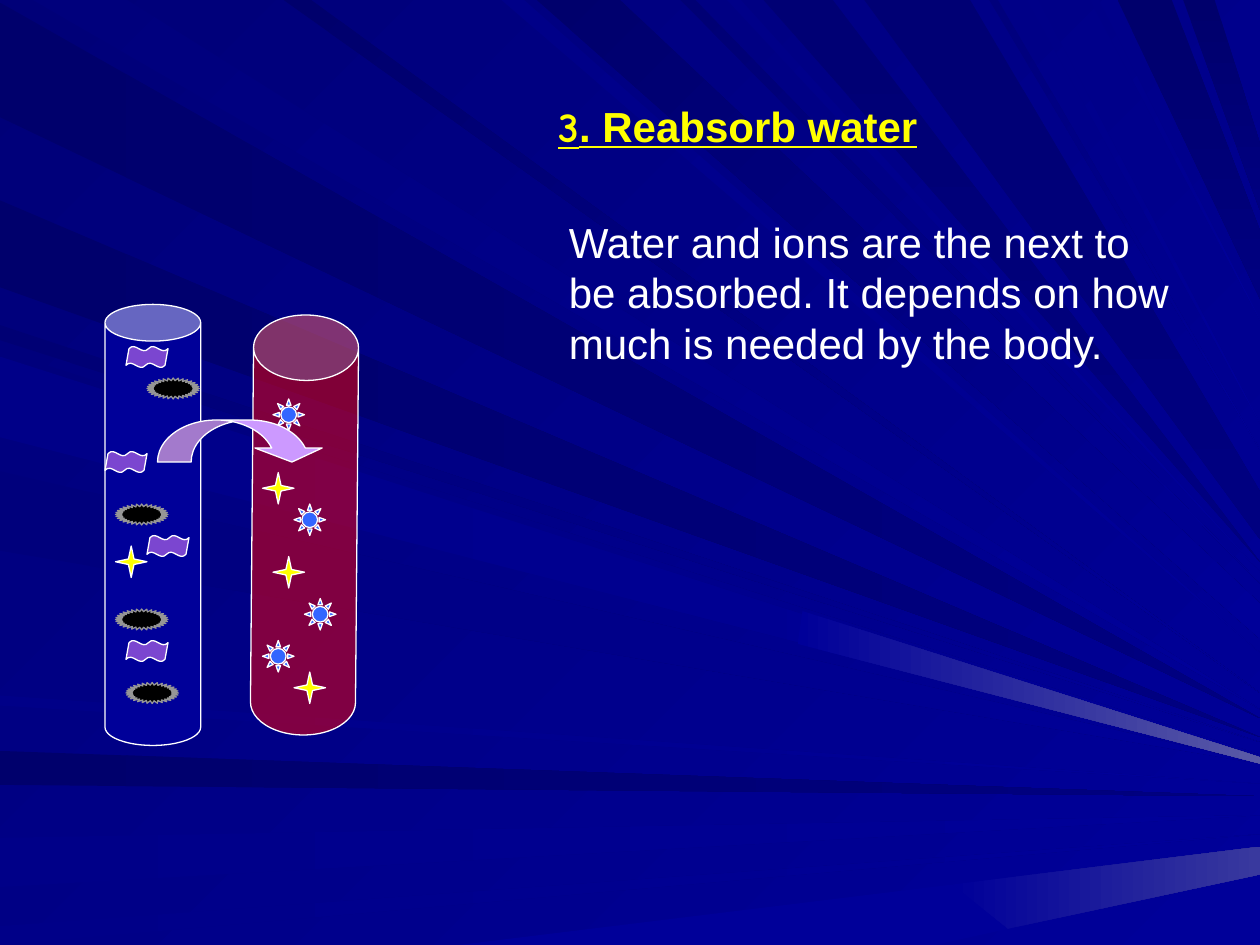
from functools import partial

from lxml.etree import SubElement
from pptx import Presentation
from pptx.dml.color import RGBColor
from pptx.enum.shapes import MSO_SHAPE
from pptx.oxml.ns import qn
from pptx.util import Cm, Pt

navy = partial(RGBColor, 0, 0)  # pure blue of a given depth

DEEP = navy(0x6C)
DARK = navy(0x74)
MID = navy(0x7C)
NAVY = navy(0x80)
SOFT = navy(0x88)
BLUE = navy(0x99)
GLOW_LOW = RGBColor(0x39, 0x39, 0x9E)
GLOW_HIGH = RGBColor(0x5A, 0x5A, 0xA6)
WHITE = RGBColor(0xFF, 0xFF, 0xFF)
YELLOW = RGBColor(0xFF, 0xFF, 0x00)
RED = RGBColor(0xFF, 0x00, 0x00)
BLACK = RGBColor(0x00, 0x00, 0x00)
GREY = RGBColor(0x96, 0x96, 0x96)
PURPLE = RGBColor(0x7B, 0x46, 0xD0)
LILAC = RGBColor(0xCC, 0x99, 0xFF)
SKY = RGBColor(0x33, 0x66, 0xFF)

# Rays run to the right edge; lengths in 1/1000 of the slide width.
# First colour, last colour, start and end on the near edge, height(s) of the tip
LEFT_RAYS = [
    (DEEP, NAVY, 2, 93, 570),
    (DEEP, NAVY, 596, 623, 632),
    (SOFT, BLUE, 665, 704, 647),
    (SOFT, BLUE, 735, 750, 662),
    (DARK, BLUE, 258, 270, 589),
    (DEEP, NAVY, 159, 228, 585),
    (MID, BLUE, 278, 342, 599),
    (MID, BLUE, 374, 437, 606),
    (SOFT, BLUE, 552, 560, 622),
    (SOFT, BLUE, 283, 347, 604),
]
TOP_RAYS = [
    (MID, BLUE, 26, 101, 563),
    (SOFT, BLUE, 398, 416, 518),
    (DEEP, BLUE, 426, 492, 507, 479),
    (DARK, BLUE, 540, 552, 463),
    (DARK, NAVY, 606, 661, 446),
    (DEEP, NAVY, 887, 930, 237, 183),
    (DEEP, NAVY, 939, 964, 167, 114),
    (DEEP, BLUE, 225, 247, 550),
    (SOFT, BLUE, 577, 588, 454),
    (DARK, NAVY, 686, 770, 428, 390),
    (MID, BLUE, 785, 792, 357),
    (SOFT, BLUE, 815, 824, 336),
    (SOFT, BLUE, 865, 872, 254),
]
GLOWS = [
    (BLUE, BLUE, [(364, 750), (742, 750), (801, 737), (756, 702)]),
    (BLUE, GLOW_LOW, [(756, 702), (800, 737), (1000, 694), (1000, 672)]),
    (BLUE, GLOW_HIGH, [(637, 485), (633, 511), (1000, 606), (1000, 601)]),
]

# Particles: preset, adjustments, fill, line, size, places (in grid steps)
PARTICLES = [
    (MSO_SHAPE.STAR_4_POINT, [0.125], YELLOW, WHITE, (3, 3),
     [(11, 52), (25, 45), (26, 53), (28, 64)]),
    (MSO_SHAPE.DOUBLE_WAVE, [0.103, -0.036], PURPLE, WHITE, (4, 2),
     [(12, 61), (10, 43), (14, 51), (12, 33)]),
    (MSO_SHAPE.STAR_32_POINT, [0.375], BLACK, GREY, (5, 2),
     [(11, 58), (12, 65), (11, 48), (14, 36)]),
    (MSO_SHAPE.SUN, [0.25], SKY, WHITE, (3, 3),
     [(26, 38), (28, 48), (25, 61), (29, 57)]),
]


def grid(steps):
    """The drawing sits on a grid of 120 steps across the slide."""
    return Cm(25.4 / 120 * steps)


def paint_gradient(fill, first, last, angle):
    fill.gradient()
    fill.gradient_angle = (360 - angle) % 360  # python-pptx counts anticlockwise
    for stop, colour in zip(fill.gradient_stops, (first, last)):
        stop.color.rgb = colour


def add_ray(slide, first, last, corners, angle=0):
    outline = slide.shapes.build_freeform(*corners[0], scale=Cm(0.0254))
    outline.add_line_segments(corners[1:], close=True)
    ray = outline.convert_to_shape()
    ray.shadow.inherit = False
    ray.line.fill.background()
    paint_gradient(ray.fill, first, last, angle)


def add_background(slide):
    paint_gradient(slide.background.fill, navy(0x78), BLUE, 45)
    for first, last, start, end, *tips in LEFT_RAYS:
        tip_corners = [(1000, tip) for tip in tips]
        add_ray(slide, first, last, [(0, start), *tip_corners, (0, end)])
    for first, last, start, end, *tips in TOP_RAYS:
        tip_corners = [(1000, tip) for tip in tips]
        angle = 90 if last == NAVY else 45
        add_ray(slide, first, last, [(start, 0), *tip_corners, (end, 0)], angle)
    for glow in GLOWS:
        add_ray(slide, *glow)


def add_figure(slide, preset, place, size, adjustments, fill, line=WHITE, alpha=None):
    figure = slide.shapes.add_shape(preset, *map(grid, place + size))
    for index, value in enumerate(adjustments):
        figure.adjustments[index] = value
    figure.shadow.inherit = False
    figure.fill.solid()
    figure.fill.fore_color.rgb = fill
    figure.line.color.rgb = line
    figure.line.width = Pt(0.75)
    if alpha is not None:
        colour = figure.fill._xPr.find(qn("a:solidFill"))[0]
        SubElement(colour, qn("a:alpha")).set("val", str(alpha * 1000))
    return figure


def add_textbox(slide, place, size):
    box = slide.shapes.add_textbox(*map(grid, place + size))
    box.text_frame.word_wrap = True
    return box.text_frame.paragraphs[0]


def add_text(paragraph, text, *, colour, font="Arial", bold=False, underline=False):
    run = paragraph.add_run()
    run.text = text
    run.font.name = font
    run.font.size = Pt(24)
    run.font.color.rgb = colour
    run.font.bold = bold
    run.font.underline = underline


def main():
    deck = Presentation()
    deck.slide_width, deck.slide_height = Cm(25.4), Cm(19.05)
    slide = deck.slides.add_slide(deck.slide_layouts[6])
    add_background(slide)

    # Heading and explanation
    heading = add_textbox(slide, (52, 9), (61, 6))
    heading_format = {"colour": YELLOW, "bold": True, "underline": True}
    add_text(heading, "3", font="Comic Neue", **heading_format)
    add_text(heading, ". Reabsorb water", **heading_format)
    explanation = add_textbox(slide, (53, 20), (61, 15.7))
    add_text(explanation, "Water and ions are the next to be absorbed. "
             "It depends on how much is needed by the body.", colour=WHITE)

    # Tubule and blood vessel
    add_figure(slide, MSO_SHAPE.CAN, (10, 29), (9.12, 42), [0.383], BLUE)
    vessel = add_figure(slide, MSO_SHAPE.CAN, (24, 30), (10, 40), [0.623], RED, alpha=50)
    vessel.rotation = 0.5

    # Particles inside them
    for preset, adjustments, fill, line, size, places in PARTICLES:
        for place in places:
            add_figure(slide, preset, place, size, adjustments, fill, line)

    # Reabsorption arrow
    add_figure(slide, MSO_SHAPE.CURVED_DOWN_ARROW, (15, 40), (16, 4),
               [0.8, 1.6, 0.333], LILAC)

    deck.save("out.pptx")


if __name__ == "__main__":
    main()
